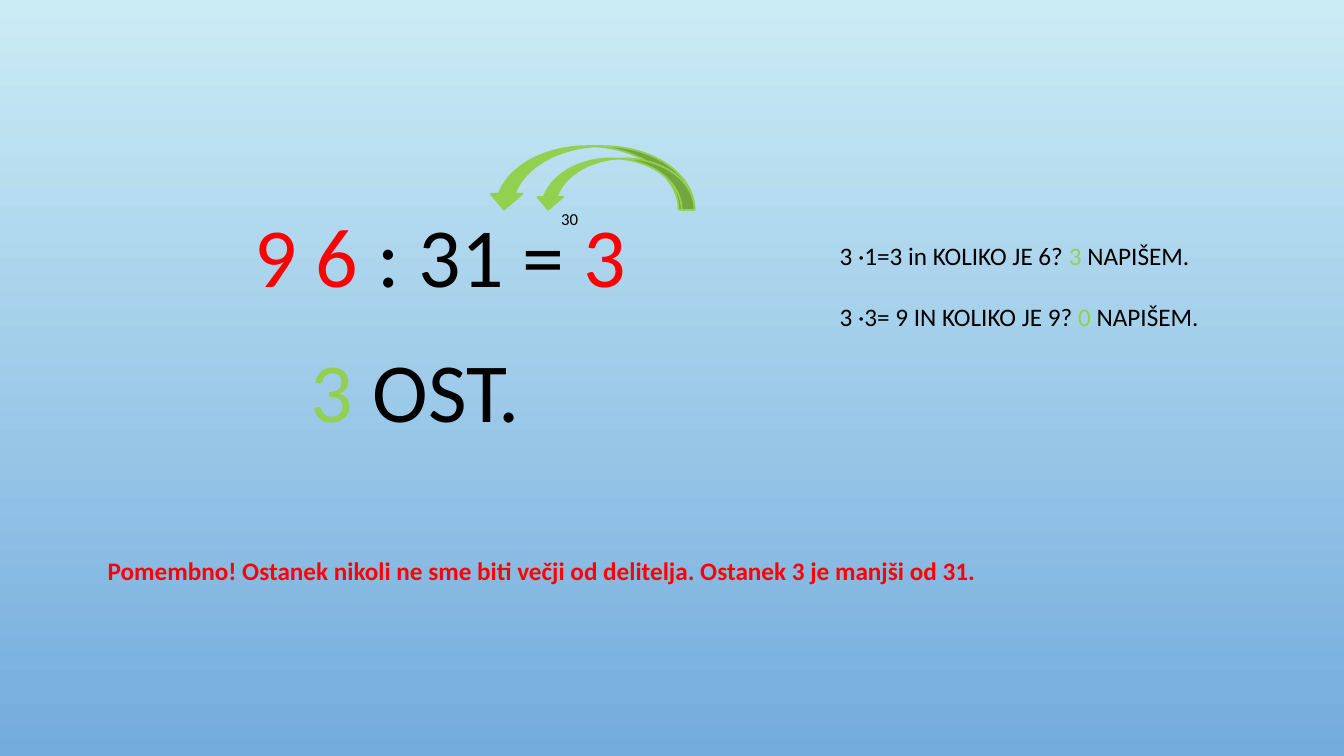
"""Build a slide explaining division with a two-digit divisor."""
from pptx import Presentation
from pptx.dml.color import RGBColor
from pptx.enum.shapes import MSO_SHAPE
from pptx.oxml.ns import qn
from pptx.util import Pt

COLORS = {
    "sky": "CBECF5",
    "blue": "73ABDD",
    "red": "FF0000",
    "green": "92D050",
    "black": "000000",
}


def color(name):
    """Return the named colour."""
    return RGBColor.from_string(COLORS[name])


def add_text(slide, box, lines, size, bold=False, gap=0, line_spacing=None, indents=None):
    """Write lines of coloured runs in a box, with an optional indent for each line."""
    shape = slide.shapes.add_textbox(*map(Pt, box))
    frame = shape.text_frame
    frame.word_wrap = True
    for index, runs in enumerate(lines):
        paragraph = frame.paragraphs[0] if index == 0 else frame.add_paragraph()
        if index:
            paragraph.space_before = Pt(gap)
        if line_spacing:
            paragraph.line_spacing = line_spacing
        if indents:
            paragraph._p.get_or_add_pPr().set("marL", str(Pt(indents[index])))
        for text, color_name in runs:
            run = paragraph.add_run()
            run.text = text
            run.font.name = "Calibri"
            run.font.size = Pt(size)
            run.font.bold = bold
            run.font.color.rgb = color(color_name)


def add_arrow(slide, right, bottom, width, height):
    """Draw a curved arrow that runs leftward from its lower right corner."""
    shape = slide.shapes.add_shape(
        MSO_SHAPE.CURVED_DOWN_ARROW,
        Pt(right - width), Pt(bottom - height), Pt(width), Pt(height),
    )
    shape.shadow.inherit = False
    shape.rotation = 180
    shape.element.spPr.find(qn("a:xfrm")).set("flipV", "1")
    shape.fill.solid()
    shape.fill.fore_color.rgb = color("green")
    shape.line.color.rgb = color("green")
    shape.line.width = Pt(1.25)


def add_background(slide):
    """Fill the slide with a gradient from top to bottom."""
    fill = slide.background.fill
    fill.gradient()
    fill.gradient_angle = 270
    for stop, name, position in zip(fill.gradient_stops, ("sky", "blue"), (0, 1)):
        stop.color.rgb = color(name)
        stop.position = position


def add_division(slide, left, top, width, height):
    """Write the division, its remainder and the multiplication arrows."""
    lines = [
        [("9 6", "red"), (" : 31 = ", "black"), ("3", "red")],
        [("3 ", "green"), ("OST.", "black")],
    ]
    add_text(slide, (left, top, width, height), lines, 60,
             gap=10, line_spacing=1.2, indents=(149.2, 189.8))
    for arrow_width, arrow_height in ((147.6, 45.4), (113.8, 36.7)):
        add_arrow(slide, left + 470.9, top + 22.4, arrow_width, arrow_height)
    add_text(slide, (left + 368.6, top + 18, 29.5, 21.6), [[("30", "black")]], 12)


def add_steps(slide, left, top, width, height):
    """Write the two steps of the calculation."""
    steps = (("3 ·1=3 in KOLIKO JE 6? ", "3 "), ("3 ·3= 9 IN KOLIKO JE 9? ", "0 "))
    lines = [
        [(question, "black"), (answer, "green"), ("NAPIŠEM.", "black")]
        for question, answer in steps
    ]
    add_text(slide, (left, top, width, height), lines, 18, gap=22)


def add_reminder(slide, left, top, width, height):
    """Write the rule about the remainder."""
    text = "Pomembno! Ostanek nikoli ne sme biti večji od delitelja. Ostanek 3 je manjši od 31."
    add_text(slide, (left, top, width, height), [[(text, "red")]], 18, bold=True)


def main():
    """Assemble and save the presentation."""
    presentation = Presentation()
    presentation.slide_width = Pt(960)
    presentation.slide_height = Pt(540)
    slide = presentation.slides.add_slide(presentation.slide_layouts[6])
    add_background(slide)
    add_division(slide, 25.2, 127.4, 926.6, 321.8)
    add_reminder(slide, 69.8, 393.1, 802, 28.8)
    add_steps(slide, 592.6, 167.8, 339.8, 72.7)
    presentation.save("out.pptx")


if __name__ == "__main__":
    main()
